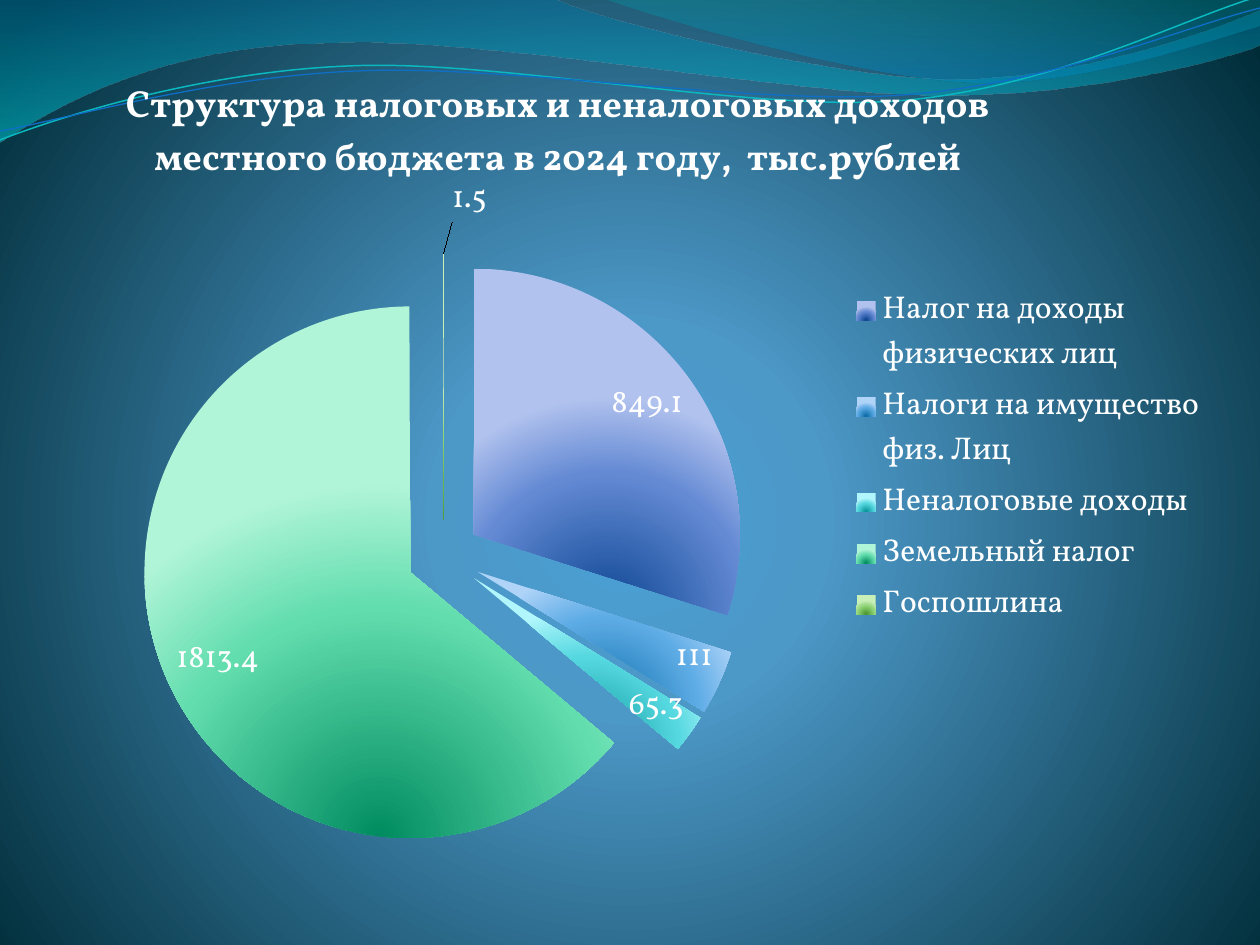
from math import cos, radians, sin

from lxml import etree
from pptx import Presentation
from pptx.chart.data import CategoryChartData
from pptx.dml.color import RGBColor
from pptx.enum.chart import XL_CHART_TYPE, XL_LABEL_POSITION, XL_LEGEND_POSITION
from pptx.oxml import parse_xml
from pptx.oxml.ns import nsdecls, qn
from pptx.util import Emu, Pt

PIE = XL_CHART_TYPE.PIE
RIGHT = XL_LEGEND_POSITION.RIGHT
INSIDE_END = XL_LABEL_POSITION.INSIDE_END
OUTSIDE_END = XL_LABEL_POSITION.OUTSIDE_END

SCALE = 914400 / 126
WIDTH, HEIGHT = 1260, 945
WAVE_TILT = 2.7
FONT = "Vollkorn"
WHITE = "FFFFFF"

BACKGROUND_STOPS = [(0, "4AA0D6", 100), (25, "4C98C7", 100), (100, "002C38", 100)]
TITLE = "Структура налоговых и неналоговых доходов местного бюджета в 2024 году,  тыс.рублей"
CHART_FRAME = (39, 39, 1182, 837)
TITLE_AREA = (119, 69)
PIE_AREA = (141, 253, 606, 607)
LEGEND_AREA = (848, 282, 360, 352)
SMALL_LABEL_SHIFT = (26, -24)

# category, value, gradient from the bottom centre outwards
INCOME = [
    ("Налог на доходы физических лиц", 849.1, ("0A4490", "648AD4", "B1C2EE")),
    ("Налоги на имущество физ. Лиц", 111, ("0A6CA8", "5EACE6", "AFD4F8")),
    ("Неналоговые доходы", 65.3, ("07929A", "56D8E0", "B0F6FC")),
    ("Земельный налог", 1813.4, ("008C60", "62DDAE", "B1F5D8")),
    ("Госпошлина", 1.5, ("4A962E", "92D67A", "C8EFB8")),
]

# each wave: start point, then points (2 numbers) or Bezier curves (6 numbers)
FILLED_WAVES = [
    ([(0, 0), (554, -1), (600, 21, 837, 79, 955, 79), (1075, 79, 1207, 33, 1260, 11),
      (1261, 45), (1239, 55, 1096, 96, 940, 95), (784, 95, 481, 35, 324, 43),
      (163, 45, 58, 105, -1, 142), (0, 0)],
     [(0, "0074A1", 45), (100, "00C6CF", 55)]),
    ([(604, -1), (641, 14, 859, 78, 969, 82), (1079, 87, 1211, 40, 1260, 26),
      (1260, 0), (604, -1)],
     [(0, "00A1A9", 30), (80, "008BBF", 45)]),
]
LINE_WAVES = [
    ([(0, 140), (60, 117, 199, 72, 349, 66), (498, 59, 747, 112, 898, 101),
      (1050, 89, 1182, 19, 1257, -3)], (629, 72), "0AB8BF", 0.85),
    ([(0, 131), (59, 121, 207, 77, 357, 71), (508, 64, 751, 106, 903, 95),
      (1053, 84, 1186, 26, 1260, 8)], (629, 74), "0F6FC6", 0.75),
]


def px(length):
    return Emu(round(length * SCALE))


def color(value):
    return RGBColor.from_string(value)


def set_format(target, values):
    for name, value in values.items():
        setattr(target, name, value)


def style_font(font, size, bold=False):
    set_format(font, {"name": FONT, "size": Pt(size), "bold": bold})
    font.color.rgb = color(WHITE)


def gradient(stops, shade):
    """Return a gradFill element; stops are (percent, colour, opacity percent)."""
    marks = "".join(
        f'<a:gs pos="{place * 1000}"><a:srgbClr val="{value}">'
        f'<a:alpha val="{opacity * 1000}"/></a:srgbClr></a:gs>'
        for place, value, opacity in stops)
    return parse_xml(f'<a:gradFill {nsdecls("a")} rotWithShape="1">'
                     f'<a:gsLst>{marks}</a:gsLst>{shade}</a:gradFill>')


def circle_shade(left, top, right, bottom):
    return (f'<a:path path="circle"><a:fillToRect l="{left * 1000}" t="{top * 1000}" '
            f'r="{right * 1000}" b="{bottom * 1000}"/></a:path>')


def replace_fill(fill, properties, element):
    """Swap a solid fill for the given gradient element."""
    fill.solid()
    properties.replace(properties.find(qn("a:solidFill")), element)


def set_background(page):
    fill = page.background.fill
    properties = page.background._cSld.bg.bgPr
    replace_fill(fill, properties, gradient(BACKGROUND_STOPS, circle_shade(10, 110, 10, 100)))


def turn(step, center, degrees):
    """Rotate every point of a step about the center."""
    cx, cy = center
    c, s = cos(radians(degrees)), sin(radians(degrees))
    turned = []
    for x, y in zip(step[::2], step[1::2]):
        turned += [cx + (x - cx) * c - (y - cy) * s, cy + (x - cx) * s + (y - cy) * c]
    return tuple(turned)


def add_outline(shapes, steps, close):
    """Add a freeform through all points, then join each curve's three points."""
    corners = [(px(x), px(y)) for step in steps for x, y in zip(step[::2], step[1::2])]
    builder = shapes.build_freeform(*corners[0], scale=1.0)
    builder.add_line_segments(corners[1:], close=close)
    shape = builder.convert_to_shape()
    shape.shadow.inherit = False
    segments = iter(list(shape._element.iter(qn("a:lnTo"))))
    for step in steps[1:]:
        parts = [next(segments) for _ in range(len(step) // 2)]
        if len(parts) == 3:
            curve = etree.Element(qn("a:cubicBezTo"))
            parts[0].addprevious(curve)
            for part in parts:
                curve.append(part[0])
                part.getparent().remove(part)
    return shape


def add_filled_wave(shapes, steps, stops):
    shape = add_outline(shapes, steps, True)
    replace_fill(shape.fill, shape._element.spPr,
                 gradient(stops, '<a:lin ang="5400000" scaled="1"/>'))
    shape.line.fill.background()


def add_line_wave(shapes, steps, center, value, width):
    shape = add_outline(shapes, [turn(step, center, WAVE_TILT) for step in steps], False)
    shape.rotation = 360 - WAVE_TILT
    shape.fill.background()
    shape.line.color.rgb = color(value)
    shape.line.width = Pt(width)


def layout(values, modes="", inner=False):
    """Return a manual chart layout; values are x, y and optionally w, h."""
    target = '<c:layoutTarget val="inner"/>' if inner else ""
    parts = "".join(f'<c:{name} val="{value:.4f}"/>' for name, value in zip("xywh", values))
    return parse_xml(f'<c:layout {nsdecls("c")}><c:manualLayout>{target}{modes}{parts}'
                     '</c:manualLayout></c:layout>')


def area_layout(area, inner=False):
    left, top, width, height = CHART_FRAME
    place = [(area[0] - left) / width, (area[1] - top) / height]
    size = [length / whole for length, whole in zip(area[2:], (width, height))]
    return layout(place + size, '<c:xMode val="edge"/><c:yMode val="edge"/>', inner)


def place_part(parent, before, element):
    """Put a layout right after the named child, or first if there is none."""
    for old in parent.findall(qn("c:layout")):
        parent.remove(old)
    anchor = parent.find(qn(before)) if before else None
    if anchor is None:
        parent.insert(0, element)
    else:
        anchor.addnext(element)


def add_income_chart(page):
    data = CategoryChartData()
    data.categories = [name for name, _, _ in INCOME]
    data.add_series("Series 1", [value for _, value, _ in INCOME])
    chart = page.shapes.add_chart(PIE, *map(px, CHART_FRAME), data).chart
    style_font(chart.font, 18)

    chart.has_title = True
    title = chart.chart_title
    title.text_frame.text = TITLE
    style_font(title.text_frame.paragraphs[0].runs[0].font, 21.6, True)
    place_part(title._element, "c:tx", area_layout(TITLE_AREA))

    chart.has_legend = True
    set_format(chart.legend, {"position": RIGHT, "include_in_layout": False})
    style_font(chart.legend.font, 18)
    place_part(chart.legend._element, "c:legendPos", area_layout(LEGEND_AREA))

    plot = chart.plots[0]
    plot.vary_by_categories = True
    place_part(plot._element.getparent(), None, area_layout(PIE_AREA, True))
    style_slices(plot.series[0])


def style_slices(series):
    for index, (_, _, shades) in enumerate(INCOME):
        form = series.points[index].format
        stops = [(place, value, 100) for place, value in zip((0, 65, 100), shades)]
        form.line.fill.background()
        replace_fill(form.fill, form.fill._xPr, gradient(stops, circle_shade(50, 100, 50, 0)))
    explosion = etree.Element(qn("c:explosion"), val="14")
    series._element.find(qn("c:dPt")).addprevious(explosion)

    labels = series.data_labels
    set_format(labels, {"show_value": True, "show_percentage": False, "position": INSIDE_END})
    style_font(labels.font, 18)
    label = series.points[len(INCOME) - 1].data_label
    style_font(label.font, 18)
    label.position = OUTSIDE_END
    shift = [length / whole for length, whole in zip(SMALL_LABEL_SHIFT, CHART_FRAME[2:])]
    place_part(labels._element.find(qn("c:dLbl")), "c:idx", layout(shift))


def main():
    deck = Presentation()
    set_format(deck, {"slide_width": px(WIDTH), "slide_height": px(HEIGHT)})
    page = deck.slides.add_slide(deck.slide_layouts[6])
    set_background(page)
    for wave in FILLED_WAVES:
        add_filled_wave(page.shapes, *wave)
    lines = page.shapes.add_group_shape()
    for wave in LINE_WAVES:
        add_line_wave(lines.shapes, *wave)
    add_income_chart(page)
    deck.save("out.pptx")


if __name__ == "__main__":
    main()
